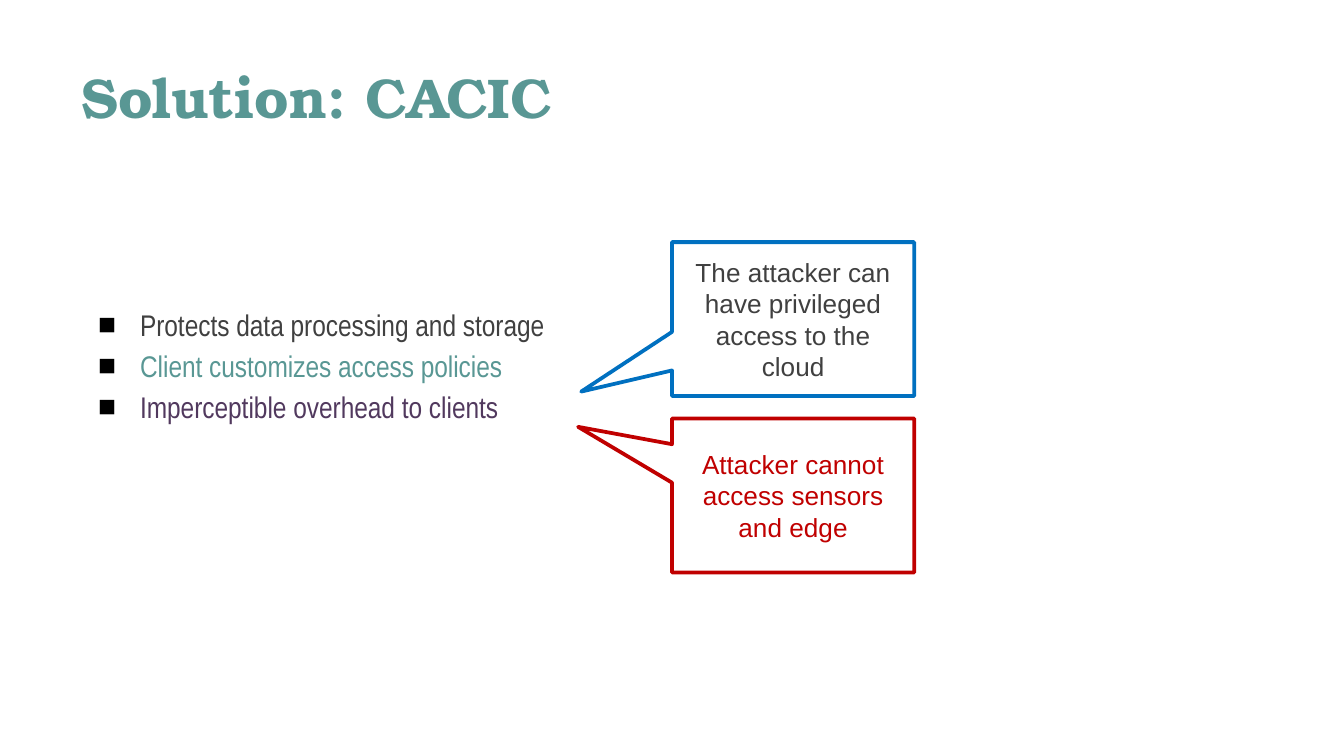
from lxml import etree
from pptx import Presentation, util as u
from pptx.dml.color import RGBColor
from pptx.enum import shapes, text
from pptx.oxml import ns

PX = u.Inches(1) // 96
WHITE = RGBColor(0xFF, 0xFF, 0xFF)
GRAY = RGBColor(0x40, 0x40, 0x40)
TEAL = RGBColor(0x59, 0x97, 0x94)
PURPLE = RGBColor(0x51, 0x39, 0x5E)
BLUE = RGBColor(0x00, 0x70, 0xC0)
RED = RGBColor(0xC0, 0x00, 0x00)
BULLETS = [
    ("Protects data processing and storage", GRAY),
    ("Client customizes access policies", TEAL),
    ("Imperceptible overhead to clients", PURPLE),
]
CALLOUTS = [
    (173, "The attacker can have privileged access to the cloud", GRAY, BLUE, (-0.875, 0.471)),
    (299, "Attacker cannot access sensors and edge", RED, RED, (-0.888, -0.446)),
]


class SlideBuilder:
    """Draws titles, bullet lists and callouts on one slide, with lengths in px."""

    title_font = "TeX Gyre Bonum"
    list_font = "Arial Narrow"
    callout_font = "Arial"
    inset = 10
    indent = 30

    def __init__(self, slide):
        self.slide = slide

    def box(self, left, top, width, height):
        shape = self.slide.shapes.add_textbox(left * PX, top * PX, width * PX, height * PX)
        frame = shape.text_frame
        frame.word_wrap = True
        frame.margin_left = frame.margin_right = self.inset * PX
        frame.margin_top = frame.margin_bottom = self.inset * PX
        return frame

    def style(self, paragraph, name, size, color, bold=False):
        for run in paragraph.runs:
            run.font.name = name
            run.font.size = u.Pt(size)
            run.font.bold = bold
            run.font.color.rgb = color

    def title(self, left, top, width, height, words):
        frame = self.box(left, top, width, height)
        frame.vertical_anchor = text.MSO_ANCHOR.MIDDLE
        frame.text = words
        self.style(frame.paragraphs[0], self.title_font, 30, TEAL, bold=True)

    def bullet_list(self, left, top, width, height, margin_top, items):
        frame = self.box(left, top, width, height)
        frame.margin_top = margin_top * PX
        frame.text = "\n".join(words for words, color in items)
        for paragraph, (words, color) in zip(frame.paragraphs, items):
            paragraph.line_spacing = 1.15
            properties = paragraph._p.get_or_add_pPr()
            properties.set("marL", str(self.indent * PX))
            properties.set("indent", str(-self.indent * PX))
            bullet_color = etree.SubElement(properties, ns.qn("a:buClr"))
            etree.SubElement(bullet_color, ns.qn("a:srgbClr"), val="000000")
            etree.SubElement(properties, ns.qn("a:buFont"), typeface="Arial")
            etree.SubElement(properties, ns.qn("a:buChar"), char="■")
            self.style(paragraph, self.list_font, 16, color)

    def callout(self, left, top, width, height, words, color, outline, tip):
        shape = self.slide.shapes.add_shape(
            shapes.MSO_SHAPE.RECTANGULAR_CALLOUT, left * PX, top * PX, width * PX, height * PX)
        shape.shadow.inherit = False
        shape.adjustments[0], shape.adjustments[1] = tip
        shape.fill.solid()
        shape.fill.fore_color.rgb = WHITE
        shape.line.color.rgb = outline
        shape.line.width = u.Pt(2)
        frame = shape.text_frame
        frame.word_wrap = True
        frame.vertical_anchor = text.MSO_ANCHOR.MIDDLE
        frame.text = words
        paragraph = frame.paragraphs[0]
        paragraph.alignment = text.PP_ALIGN.CENTER
        self.style(paragraph, self.callout_font, 14, color)


def main():
    presentation = Presentation()
    presentation.slide_width = 960 * PX
    presentation.slide_height = 540 * PX
    builder = SlideBuilder(presentation.slides.add_slide(presentation.slide_layouts[6]))
    builder.title(48, 35, 895, 68, "Solution: CACIC")
    builder.bullet_list(60, 114, 819, 228, 124, BULLETS)
    for top, words, color, outline, tip in CALLOUTS:
        builder.callout(480, top, 173, 110, words, color, outline, tip)
    presentation.save("out.pptx")


if __name__ == "__main__":
    main()
